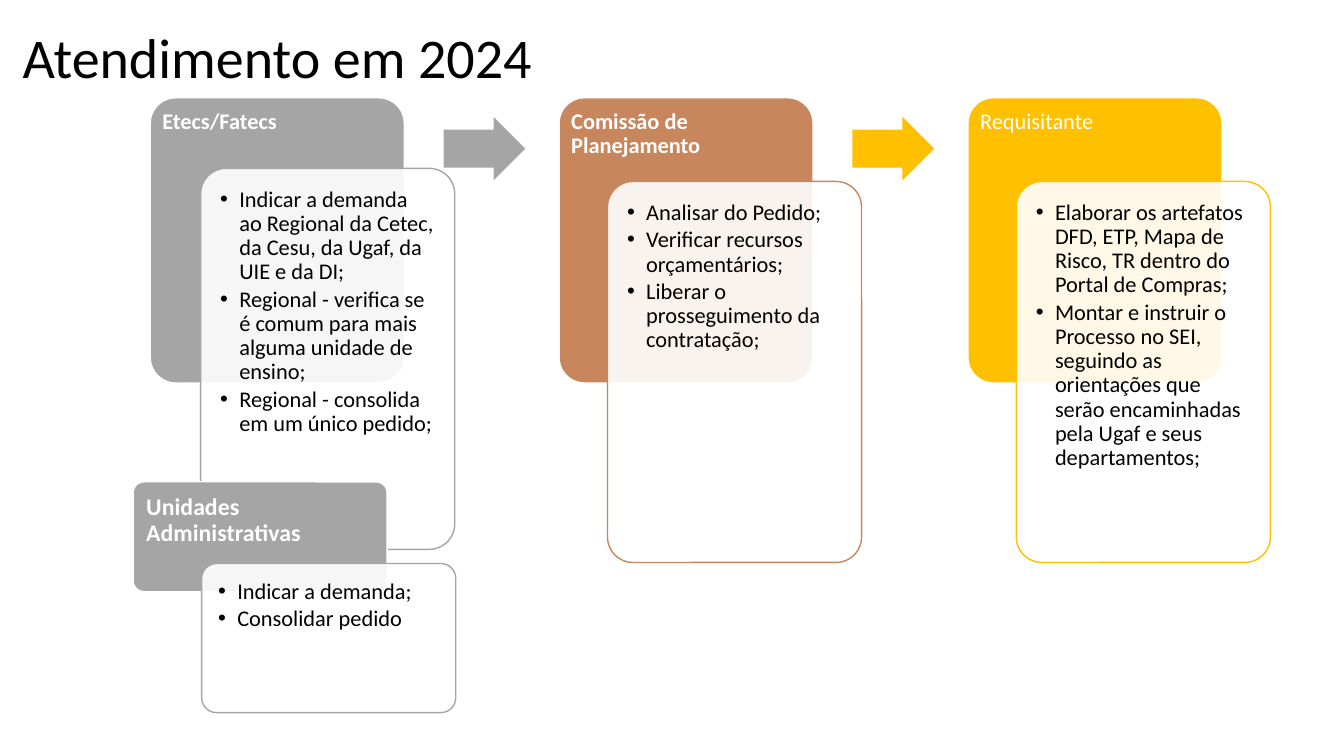
from lxml import etree
from pptx import Presentation
from pptx.dml.color import RGBColor
from pptx.enum.shapes import MSO_SHAPE as Shape
from pptx.enum.text import MSO_ANCHOR as Anchor, PP_ALIGN as Align
from pptx.oxml.ns import qn
from pptx.util import Inches, Pt

COLORS = {"gray": "A5A5A5", "copper": "C8865C", "gold": "FFC000",
          "white": "FFFFFF", "black": "000000"}
FONT = "Calibri"
LEFT, TOP, PITCH = 1.49, 0.97, 4.055
CARD_W, HEAD_H, BODY_H = 2.52, 2.83, 3.78
CORNER = 0.1
CORNER_INSET = 0.29 * CORNER  # share of the short side a rounded corner takes from the text area
INDENT = 0.19

STEPS = [
    dict(title="Etecs/Fatecs", color="gray", shift=(0.5, 0.7), items=[
        "Indicar a demanda ao Regional da Cetec, da Cesu, da Ugaf, da UIE e da DI;",
        "Regional - verifica se é comum para mais alguma unidade de ensino;",
        "Regional - consolida em um único pedido;"]),
    dict(title="Comissão de Planejamento", color="copper", shift=(0.48, 0.83), items=[
        "Analisar do Pedido;",
        "Verificar recursos orçamentários;",
        "Liberar o prosseguimento da contratação;"]),
    dict(title="Requisitante", color="gold", shift=(0.48, 0.83), bold=False, items=[
        "Elaborar os artefatos DFD, ETP, Mapa de Risco, TR dentro do Portal de Compras;",
        "Montar e instruir o Processo no SEI, seguindo as orientações que "
        "serão encaminhadas pela Ugaf e seus departamentos;"]),
]
UNITS = dict(title="Unidades Administrativas", color="gray", shift=(0.68, 0.81),
             head_h=1.09, body_h=1.48, size=17, pad=0.13,
             items=["Indicar a demanda;", "Consolidar pedido"])


def rgb(name):
    return RGBColor.from_string(COLORS[name])


def add_bullet(p):
    pPr = p._p.get_or_add_pPr()
    pPr.set("marL", str(Inches(INDENT)))
    pPr.set("indent", str(-Inches(INDENT)))
    etree.SubElement(pPr, qn("a:buFont")).set("typeface", "Arial")
    etree.SubElement(pPr, qn("a:buChar")).set("char", "•")


def write(tf, lines, size=16, color="black", bold=False, align=Align.LEFT,
          anchor=Anchor.TOP, inset=0.1, wrap=True, bullet=False, spacing=0.9, after=0):
    tf.word_wrap = wrap
    tf.vertical_anchor = anchor
    tf.margin_left = tf.margin_right = tf.margin_top = tf.margin_bottom = Inches(inset)
    for i, text in enumerate(lines):
        p = tf.add_paragraph() if i else tf.paragraphs[0]
        p.alignment = align
        p.line_spacing = spacing
        p.space_before = Pt(0)
        p.space_after = Pt(after)
        if bullet:
            add_bullet(p)
        r = p.add_run()
        r.text = text
        r.font.name, r.font.size, r.font.bold = FONT, Pt(size), bold
        r.font.color.rgb = rgb(color)


def add_box(s, kind, x, y, w, h, fill, line=None, opacity=100):
    sp = s.shapes.add_shape(kind, Inches(x), Inches(y), Inches(w), Inches(h))
    sp.shadow.inherit = False
    sp.fill.solid()
    sp.fill.fore_color.rgb = rgb(fill)
    if opacity < 100:
        clr = sp.fill._xPr.find(qn("a:solidFill"))[0]
        etree.SubElement(clr, qn("a:alpha")).set("val", str(opacity * 1000))
    if line:
        sp.line.color.rgb = rgb(line)
        sp.line.width = Pt(1)
    else:
        sp.line.fill.background()
    return sp


def add_panel(s, x, y, w, h, lines, fill, line, opacity=100, pad=0.12, **fmt):
    """Rounded box whose text starts pad inches inside its text edge."""
    sp = add_box(s, Shape.ROUNDED_RECTANGLE, x, y, w, h, fill, line, opacity)
    sp.adjustments[0] = CORNER
    write(sp.text_frame, lines, inset=pad, **fmt)


def add_card(s, x, y, title, color, shift, items, head_h=HEAD_H, body_h=BODY_H,
             size=16, bold=True, pad=0.12):
    """Coloured header with a translucent list overlapping it."""
    head_pad = pad - CORNER_INSET * min(CARD_W, head_h)
    add_panel(s, x, y, CARD_W, head_h, [title], color, "white", pad=head_pad,
              size=size, color="white", bold=bold)
    add_panel(s, x + shift[0], y + shift[1], CARD_W, body_h, items, "white", color,
              opacity=90, bullet=True, after=2.4)


def add_arrow(s, x, y, color):
    sp = add_box(s, Shape.RIGHT_ARROW, x, y, 0.81, 0.63, color)
    sp.adjustments[0], sp.adjustments[1] = 0.6, 0.5


def add_title(s, x, y, w, h, text):
    sp = s.shapes.title
    sp.left, sp.top, sp.width, sp.height = (Inches(v) for v in (x, y, w, h))
    write(sp.text_frame, [text], size=40, align=Align.CENTER, anchor=Anchor.MIDDLE,
          inset=0.05, wrap=False, spacing=1.0)


def add_flow(s, x, y):
    for i, step in enumerate(STEPS):
        left = x + i * PITCH
        add_card(s, left, y, **step)
        if i < len(STEPS) - 1:
            add_arrow(s, left + 2.91, y + 0.19, "gold" if i else "gray")


def main():
    prs = Presentation()
    prs.slide_width, prs.slide_height = Inches(13.33), Inches(7.5)
    s = prs.slides.add_slide(prs.slide_layouts[5])
    add_title(s, 0.1, 0.17, 5.3, 0.77, "Atendimento em 2024")
    add_flow(s, LEFT, TOP)
    add_card(s, 1.32, 4.78, **UNITS)
    prs.save("out.pptx")


if __name__ == "__main__":
    main()
